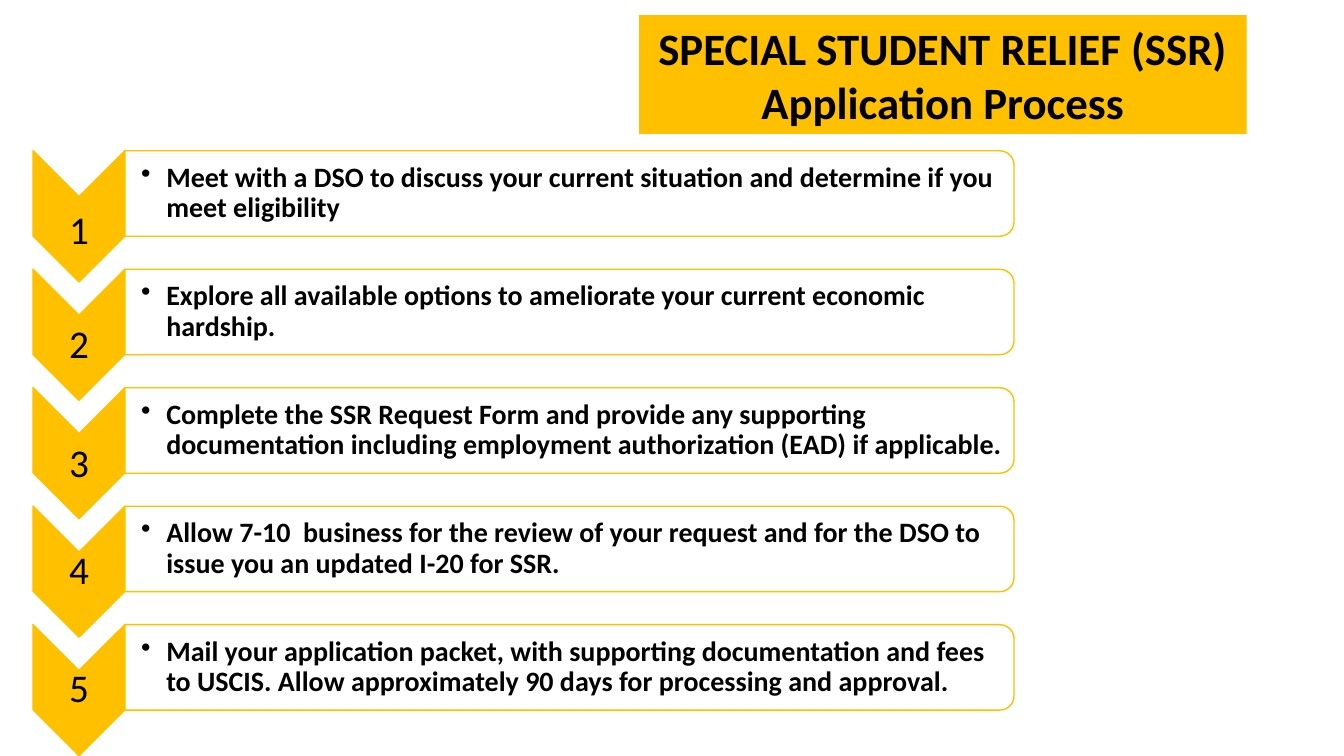
import lxml.etree
import pptx
import pptx.dml.color
import pptx.enum.shapes
import pptx.enum.text
import pptx.oxml.ns
import pptx.util

GOLD, WHITE, BLACK = "FFC000", "FFFFFF", "000000"
colour = pptx.dml.color.RGBColor.from_string
presets = pptx.enum.shapes.MSO_SHAPE
align = pptx.enum.text.PP_ALIGN
qn = pptx.oxml.ns.qn

deck = pptx.Presentation()
deck.slide_width = pptx.util.Inches(13.33)
deck.slide_height = pptx.util.Inches(7.5)
column = deck.slide_width / 100
row = deck.slide_height / 100
page = deck.slides.add_slide(deck.slide_layouts[5])


def add_turned(kind, middle_x, middle_y, width, height, fill):
    """Add a shape turned by 90 degrees that covers width by height on the slide."""
    shape = page.shapes.add_shape(
        kind, round(middle_x - height / 2), round(middle_y - width / 2),
        round(height), round(width))
    shape.rotation = 90
    shape.shadow.inherit = False
    shape.fill.solid()
    shape.fill.fore_color.rgb = colour(fill)
    shape.line.color.rgb = colour(GOLD)
    shape.line.width = pptx.util.Pt(1)
    return shape


def write(box, text, size, bold=False, alignment=align.CENTER, spacing=0.9,
          margins=(0.02, 0.02), bullet=False):
    frame = box.text_frame
    frame.word_wrap = True
    frame.auto_size = pptx.enum.text.MSO_AUTO_SIZE.NONE
    frame.vertical_anchor = pptx.enum.text.MSO_ANCHOR.MIDDLE
    frame.margin_left, frame.margin_right = map(pptx.util.Inches, margins)
    frame.margin_top = frame.margin_bottom = pptx.util.Inches(0.01)
    para = frame.paragraphs[0]
    if bullet:
        properties = para._p.get_or_add_pPr()
        properties.set("marL", str(pptx.util.Inches(0.25)))
        properties.set("indent", str(pptx.util.Inches(-0.25)))
        lxml.etree.SubElement(properties, qn("a:buChar")).set("char", "•")
    para.alignment = alignment
    para.line_spacing = spacing
    span = para.add_run()
    span.text = text
    span.font.name = "Calibri"
    span.font.size = pptx.util.Pt(size)
    span.font.bold = bold
    span.font.color.rgb = colour(BLACK)


title = page.shapes.title
title.left, title.top = round(47.55 * column), round(2 * row)
title.width, title.height = round(45.2 * column), round(15.7 * row)
title.fill.solid()
title.fill.fore_color.rgb = colour(GOLD)
write(title, "SPECIAL STUDENT RELIEF (SSR) Application Process", 32,
      bold=True, spacing=1.0, margins=(0.1, 0.1))

# Each step: its text and how many rows its number sits below the panel's middle
steps = [
    ("Meet with a DSO to discuss your current situation and determine if you "
     "meet eligibility", 5),
    ("Explore all available options to ameliorate your current economic "
     "hardship.", 4.5),
    ("Complete the SSR Request Form and provide any supporting documentation "
     "including employment authorization (EAD) if applicable.", 4.5),
    ("Allow 7-10  business for the review of your request and for the DSO to "
     "issue you an updated I-20 for SSR.", 3),
    ("Mail your application packet, with supporting documentation and fees "
     "to USCIS. Allow approximately 90 days for processing and approval.", 3),
]
first_middle, step_pitch = 25.6 * row, 15.67 * row
arrow_left, arrow_width, arrow_height = 2.45 * column, 6.85 * column, 17.35 * row
panel_left, panel_width, panel_height = 9.3 * column, 66.15 * column, 11.3 * row
text_width, text_height = 65.85 * column, 10.2 * row
number_height = 5.2 * row

for index, (text, number_drop) in enumerate(steps):
    middle = first_middle + index * step_pitch
    add_turned(presets.CHEVRON, arrow_left + arrow_width / 2, middle + 3 * row,
               arrow_width, arrow_height, GOLD)
    number_box = page.shapes.add_textbox(
        round(arrow_left), round(middle + number_drop * row - number_height / 2),
        round(arrow_width), round(number_height))
    write(number_box, str(index + 1), 28)

    panel = add_turned(presets.ROUND_2_SAME_RECTANGLE, panel_left + panel_width / 2,
                       middle, panel_width, panel_height, WHITE)
    panel_colour = panel._element.spPr.find(qn("a:solidFill"))[0]
    lxml.etree.SubElement(panel_colour, qn("a:alpha")).set("val", "90000")
    text_box = page.shapes.add_textbox(
        round(panel_left), round(middle - text_height / 2),
        round(text_width), round(text_height))
    write(text_box, text, 20, bold=True, alignment=align.LEFT,
          margins=(0.16, 0.01), bullet=True)

deck.save("out.pptx")
